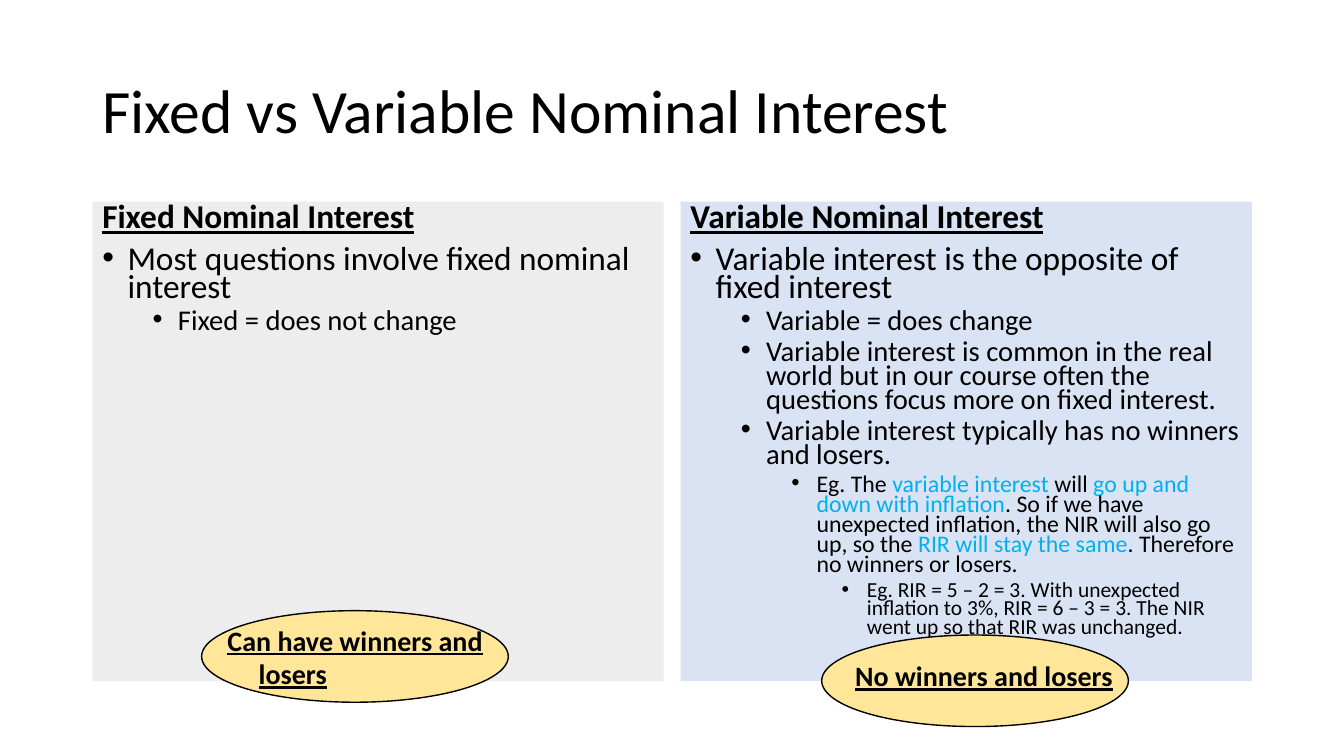
from dataclasses import dataclass

from lxml.etree import SubElement
from pptx import Presentation
from pptx.dml.color import RGBColor
from pptx.enum.shapes import MSO_SHAPE as Preset
from pptx.enum.text import MSO_ANCHOR as Anchor, PP_ALIGN as Align
from pptx.oxml.ns import qn
from pptx.util import Inches, Pt

CELLS_PER_INCH = 12  # the slide is a grid of 160 columns by 90 rows


@dataclass(frozen=True)
class Theme:
    font: str = "Calibri"
    ink: str = "000000"
    accent: str = "00B0F0"
    grey_panel: str = "EDEDED"
    blue_panel: str = "DAE3F3"
    verdict_fill: str = "FFE699"
    title_size: float = 44
    verdict_size: float = 20
    level_sizes: tuple = (23.8, 20.4, 17, 15.3)


def cells(*counts):
    return [Inches(count / CELLS_PER_INCH) for count in counts]


def write(paragraph, text, *, theme, size, heading=False, bullet=False,
          left=0, hanging=0, spacing=None, before=None):
    """Fill a paragraph; words between asterisks take the accent colour."""
    properties = paragraph._p.get_or_add_pPr()
    properties.set("marL", str(Inches(left)))
    properties.set("indent", str(-Inches(hanging)))
    paragraph.alignment = Align.LEFT
    if spacing:
        paragraph.line_spacing = spacing
    if before:
        paragraph.space_before = Pt(before)
    if bullet:
        SubElement(properties, qn("a:buFont"), typeface="Arial")
        SubElement(properties, qn("a:buChar"), char="•")
    for index, words in enumerate(text.split("*")):
        run = paragraph.add_run()
        run.text = words
        font = run.font
        font.name, font.size = theme.font, Pt(size)
        font.bold = font.underline = heading
        font.color.rgb = RGBColor.from_string(theme.accent if index % 2 else theme.ink)


class SlideBuilder:
    def __init__(self, slide, theme):
        self.slide, self.theme = slide, theme

    def shape(self, preset, box, fill, outlined=False):
        shape = self.slide.shapes.add_shape(preset, *cells(*box))
        shape.shadow.inherit = False
        shape.fill.solid()
        shape.fill.fore_color.rgb = RGBColor.from_string(fill)
        if outlined:
            shape.line.color.rgb = RGBColor.from_string(self.theme.ink)
            shape.line.width = Pt(1)
        else:
            shape.line.fill.background()
        return shape

    def text(self, text, box, anchor=Anchor.TOP, **style):
        frame = self.slide.shapes.add_textbox(*cells(*box)).text_frame
        frame.word_wrap = True
        frame.vertical_anchor = anchor
        write(frame.paragraphs[0], text, theme=self.theme, **style)

    def panel(self, box, fill, heading, points):
        frame = self.shape(Preset.RECTANGLE, box, fill).text_frame
        frame.word_wrap = True
        frame.vertical_anchor = Anchor.TOP
        sizes = self.theme.level_sizes
        write(frame.paragraphs[0], heading, theme=self.theme, size=sizes[0],
              heading=True, spacing=0.7)
        for level, text in points:
            paragraph = frame.add_paragraph()
            paragraph.level = level
            write(paragraph, text, theme=self.theme, size=sizes[level], bullet=True,
                  left=0.25 + 0.5 * level, hanging=0.25, spacing=0.7,
                  before=5 if level else 10)

    def verdict(self, text, ellipse_corner, text_box):
        self.shape(Preset.OVAL, (*ellipse_corner, 36.5, 10.9),
                   self.theme.verdict_fill, outlined=True)
        self.text(text, text_box, size=self.theme.verdict_size, heading=True,
                  left=0.31, hanging=0.31)


FIXED_POINTS = [
    (0, "Most questions involve fixed nominal interest"),
    (1, "Fixed = does not change"),
]
VARIABLE_POINTS = [
    (0, "Variable interest is the opposite of fixed interest"),
    (1, "Variable = does change"),
    (1, "Variable interest is common in the real world but in our course often "
        "the questions focus more on fixed interest."),
    (1, "Variable interest typically has no winners and losers."),
    (2, "Eg. The *variable interest* will *go up and down with inflation*. So if we "
        "have unexpected inflation, the NIR will also go up, so the *RIR will stay "
        "the same*. Therefore no winners or losers."),
    (3, "Eg. RIR = 5 – 2 = 3. With unexpected inflation to 3%, RIR = 6 – 3 = 3. "
        "The NIR went up so that RIR was unchanged."),
]


def main():
    presentation = Presentation()
    presentation.slide_width, presentation.slide_height = Inches(13.33), Inches(7.5)
    theme = Theme()
    builder = SlideBuilder(presentation.slides.add_slide(presentation.slide_layouts[6]), theme)

    # Title
    builder.text("Fixed vs Variable Nominal Interest", (11, 4.8, 138, 17.4),
                 anchor=Anchor.MIDDLE, size=theme.title_size, spacing=0.9)

    # Two panels side by side
    columns = [
        (theme.grey_panel, "Fixed Nominal Interest", FIXED_POINTS),
        (theme.blue_panel, "Variable Nominal Interest", VARIABLE_POINTS),
    ]
    for index, (fill, heading, points) in enumerate(columns):
        builder.panel((11 + 70 * index, 24, 68, 57.1), fill, heading, points)

    # Verdicts
    builder.verdict("Can have winners and losers", (24, 72.7), (25.9, 73.6, 33.8, 9.2))
    builder.verdict("No winners and losers", (97.8, 75.6), (100.6, 77.8, 33.8, 5.3))

    presentation.save("out.pptx")


if __name__ == "__main__":
    main()
